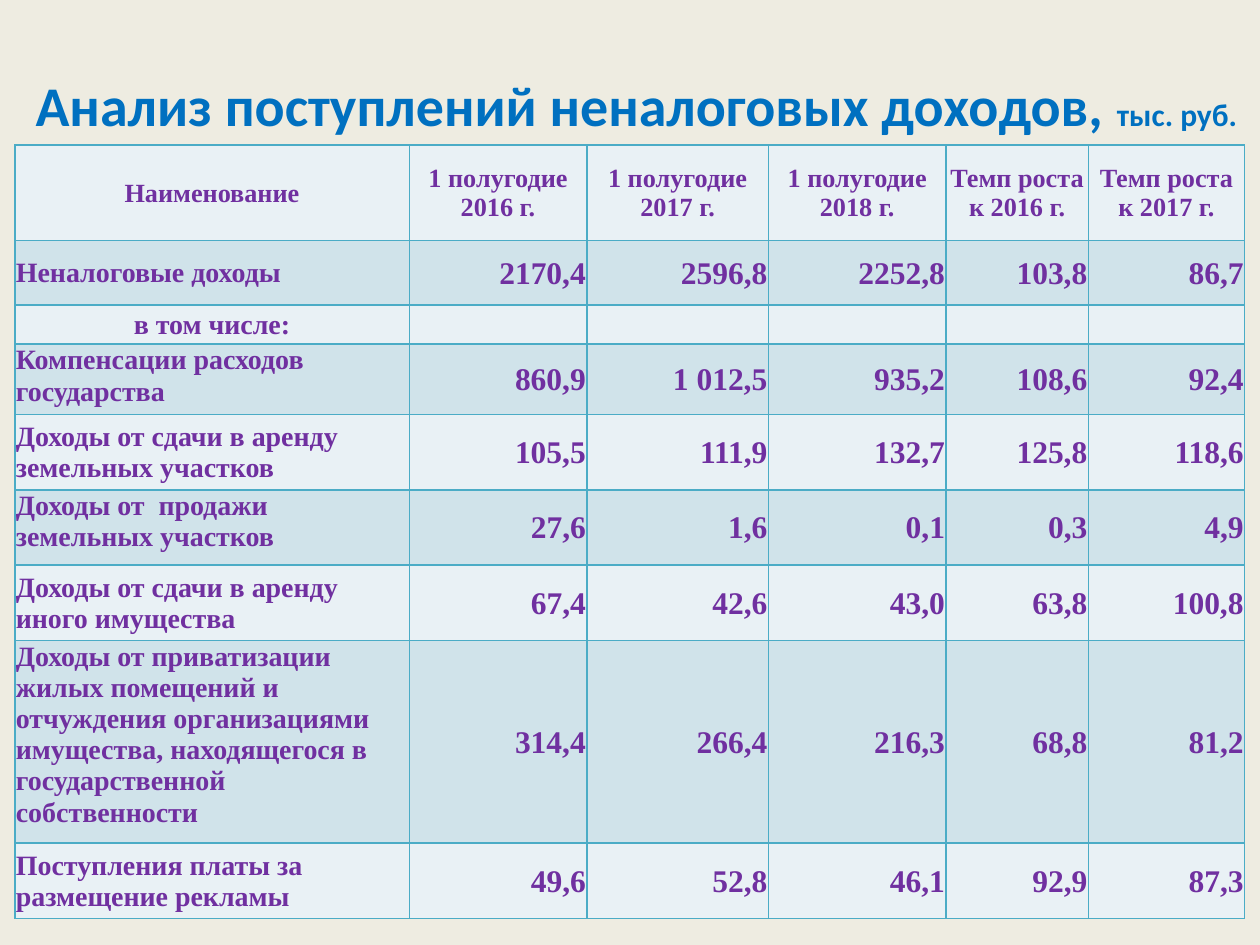
"""Build the slide analysing non-tax revenue receipts."""
from lxml.etree import SubElement
from pptx import Presentation
from pptx.dml.color import RGBColor
from pptx.enum.text import MSO_ANCHOR as Anchor, PP_ALIGN as Align
from pptx.oxml.ns import qn
from pptx.util import Cm, Pt


def color(value):
    return RGBColor.from_string(value)


def write(paragraph, text, size, typeface, shade):
    run = paragraph.add_run()
    run.text = text
    formats = {"size": Pt(size), "name": typeface, "bold": True}
    for attribute, value in formats.items():
        setattr(run.font, attribute, value)
    run.font.color.rgb = color(shade)


presentation = Presentation()
presentation.slide_width, presentation.slide_height = Cm(25.4), Cm(19.05)
slide = presentation.slides.add_slide(presentation.slide_layouts[6])
slide.background.fill.solid()
slide.background.fill.fore_color.rgb = color("EEECE1")

heading = slide.shapes.add_textbox(Cm(0), Cm(0.41), Cm(25.8), Cm(3.38)).text_frame
heading.word_wrap = True
heading.vertical_anchor = Anchor.MIDDLE
heading.paragraphs[0].alignment = Align.CENTER
for text, size in (("Анализ поступлений неналоговых доходов, ", 32), ("тыс. руб. ", 18)):
    write(heading.paragraphs[0], text, size, "Calibri", "0070C0")

receipts = [
    ("Наименование", "1 полугодие 2016 г.", "1 полугодие 2017 г.",
     "1 полугодие 2018 г.", "Темп роста к 2016 г.", "Темп роста к 2017 г."),
    ("Неналоговые доходы", "2170,4", "2596,8", "2252,8", "103,8", "86,7"),
    ("в том числе:", "", "", "", "", ""),
    ("Компенсации расходов государства", "860,9", "1 012,5", "935,2", "108,6", "92,4"),
    ("Доходы от сдачи в аренду земельных участков",
     "105,5", "111,9", "132,7", "125,8", "118,6"),
    ("Доходы от  продажи земельных участков", "27,6", "1,6", "0,1", "0,3", "4,9"),
    ("Доходы от сдачи в аренду иного имущества", "67,4", "42,6", "43,0", "63,8", "100,8"),
    ("Доходы от приватизации  жилых помещений и отчуждения организациями имущества, "
     "находящегося в государственной собственности",
     "314,4", "266,4", "216,3", "68,8", "81,2"),
    ("Поступления платы за размещение рекламы", "49,6", "52,8", "46,1", "92,9", "87,3"),
]
column_widths = (7.95, 3.58, 3.66, 3.58, 2.87, 3.15)
row_heights = (1.93, 1.3, 0.76, 1.42, 1.52, 1.52, 1.52, 3.79, 1.52)
header_row, subtitle_row = 0, 2
top_anchored_rows = (3, 5, 7)

grid = slide.shapes.add_table(
    len(receipts), len(column_widths), Cm(0.3), Cm(2.92),
    Cm(sum(column_widths)), Cm(sum(row_heights))).table
grid.first_row = grid.horz_banding = False
for column, width in zip(grid.columns, column_widths):
    column.width = Cm(width)

for row_index, (entries, height) in enumerate(zip(receipts, row_heights)):
    grid.rows[row_index].height = Cm(height)
    for column_index, entry in enumerate(entries):
        is_name = column_index == 0
        if row_index == header_row:
            size, alignment = 15, Align.CENTER
        elif is_name:
            size = 16
            alignment = Align.CENTER if row_index == subtitle_row else Align.LEFT
        else:
            size, alignment = (18 if entry else 16), Align.RIGHT
        at_top = is_name and row_index in top_anchored_rows

        cell = grid.cell(row_index, column_index)
        layout = {
            "margin_left": Cm(0.02), "margin_right": Cm(0.02),
            "margin_top": Cm(0.02), "margin_bottom": Cm(0),
            "vertical_anchor": Anchor.TOP if at_top else Anchor.MIDDLE,
        }
        for attribute, value in layout.items():
            setattr(cell, attribute, value)
        paragraph = cell.text_frame.paragraphs[0]
        paragraph.alignment = alignment
        write(paragraph, entry, size, "Times New Roman", "7030A0")

        properties = cell._tc.get_or_add_tcPr()
        for side in ("lnL", "lnR", "lnT", "lnB"):
            border = SubElement(properties, qn(f"a:{side}"), w=str(Pt(1)))
            SubElement(SubElement(border, qn("a:solidFill")), qn("a:srgbClr"), val="4BACC6")
        cell.fill.solid()
        cell.fill.fore_color.rgb = color("D0E3EA" if row_index % 2 else "E9F1F5")

presentation.save("out.pptx")
